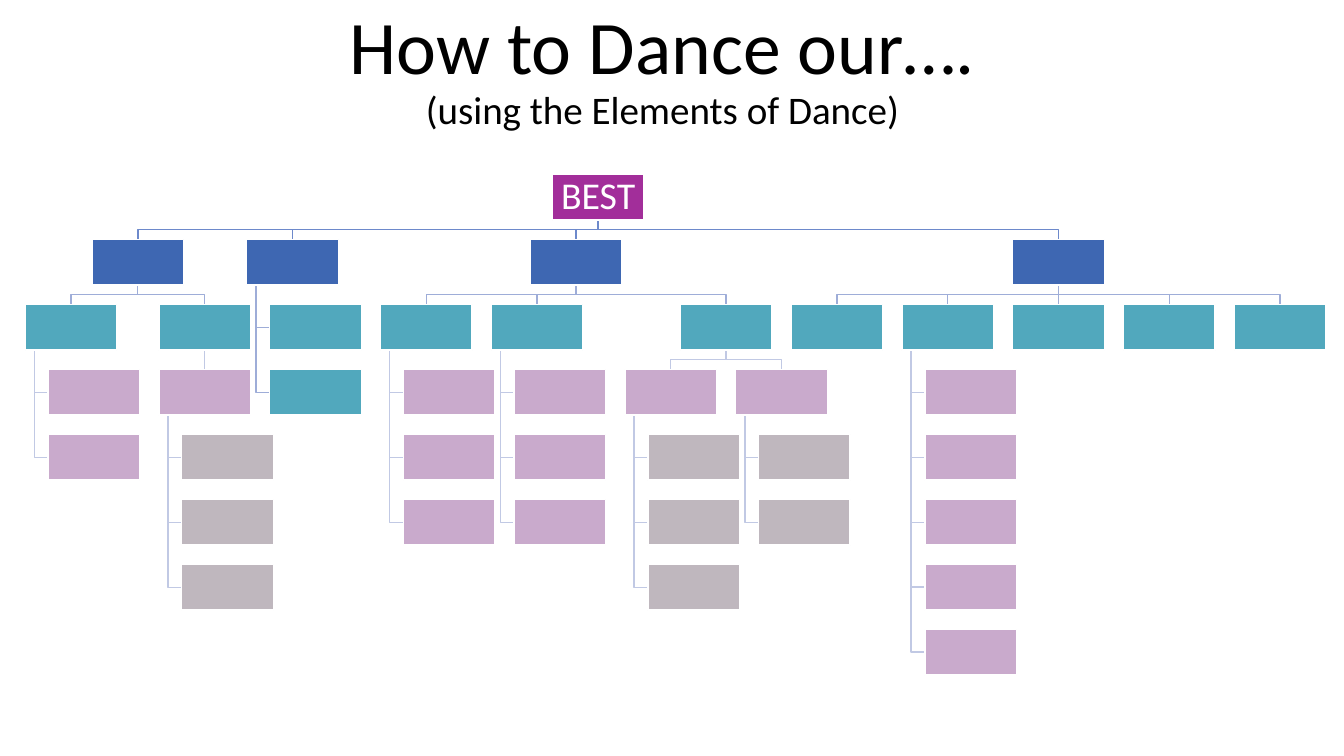
from dataclasses import dataclass, field

from lxml.etree import SubElement
from pptx import Presentation
from pptx.dml.color import RGBColor
from pptx.enum.shapes import MSO_CONNECTOR, MSO_SHAPE
from pptx.enum.text import MSO_ANCHOR, PP_ALIGN
from pptx.oxml.ns import qn
from pptx.util import Inches, Pt

SLIDE_WIDTH, SLIDE_HEIGHT = 13.33, 7.5
BOX_FILLS = ["A22E9A", "3E67B2", "51A8BD", "C9AACC", "BFB7BE"]
LINE_COLOURS = ["6D89CB", "9EADD8", "C1C9E4", "C1C9E4"]

# Chart measures, as shares of one box's width
BOX_HEIGHT = 0.5
COLUMN_STEP = 1.21
ROW_STEP = 0.71
INDENT = 0.25
SPINE = 0.1


@dataclass
class Node:
    children: list = field(default_factory=list)
    hanging: bool = False
    text: str = ""
    column: float = 0
    row: int = 0
    level: int = 0

    def walk(self):
        yield self
        for child in self.children:
            yield from child.walk()

    def shift(self, distance):
        for node in self.walk():
            node.column += distance


def branch(*children, text=""):
    return Node(list(children), text=text)


def stack(count):
    return Node([Node() for _ in range(count)], hanging=True)


def dance_tree():
    return branch(
        branch(stack(2), branch(stack(3))),
        stack(2),
        branch(stack(3), stack(3), branch(stack(3), stack(2))),
        branch(Node(), stack(5), Node(), Node(), Node()),
        text="BEST",
    )


def arrange(node, row=0, level=0):
    """Pack subtrees side by side and centre each parent over its children."""
    node.row, node.level = row, level
    if node.hanging:
        for number, child in enumerate(node.children, 1):
            arrange(child, row + number, level + 1)
            child.column = node.column + INDENT
        return
    row_ends = {}
    for child in node.children:
        arrange(child, row + 1, level + 1)
        child.shift(max((row_ends[part.row] + COLUMN_STEP - part.column
                         for part in child.walk() if part.row in row_ends), default=0))
        for part in child.walk():
            row_ends[part.row] = max(part.column, row_ends.get(part.row, part.column))
    if node.children:
        node.column = (node.children[0].column + node.children[-1].column) / 2


def colour(hex_text):
    return RGBColor.from_string(hex_text)


def set_attributes(target, values):
    for name, value in values.items():
        setattr(target, name, value)


def format_line(line, hex_text):
    line.color.rgb = colour(hex_text)
    line.width = Pt(1)


def format_frame(frame, anchor, margin):
    set_attributes(frame, {
        "word_wrap": True, "vertical_anchor": anchor,
        "margin_left": margin, "margin_right": margin,
        "margin_top": margin, "margin_bottom": margin,
    })
    paragraph = frame.paragraphs[0]
    set_attributes(paragraph, {"alignment": PP_ALIGN.CENTER, "line_spacing": 0.9})
    return paragraph


def add_run(paragraph, text, size, hex_text):
    run = paragraph.add_run()
    run.text = text
    set_attributes(run.font, {"name": "Calibri", "size": Pt(size)})
    run.font.color.rgb = colour(hex_text)


def add_title(slide, left, top, width, height):
    box = slide.shapes.add_textbox(*map(Inches, (left, top, width, height)))
    paragraph = format_frame(box.text_frame, MSO_ANCHOR.BOTTOM, Inches(0.05))
    add_run(paragraph, "How to Dance our….", 54, "000000")
    paragraph.add_line_break()
    add_run(paragraph, "(using the Elements of Dance)", 27.9, "000000")


def add_link(shapes, points, hex_text):
    points = [(Inches(x), Inches(y)) for x, y in points]
    if points[0][0] == points[-1][0]:
        link = shapes.add_connector(MSO_CONNECTOR.STRAIGHT, *points[0], *points[-1])
        SubElement(link._element.spPr, qn("a:effectLst"))
    else:
        builder = shapes.build_freeform(*points[0])
        builder.add_line_segments(points[1:], close=False)
        link = builder.convert_to_shape()
        link.fill.background()
        link.shadow.inherit = False
    format_line(link.line, hex_text)


def add_box(shapes, node, left, top, width):
    box = shapes.add_shape(MSO_SHAPE.RECTANGLE, *map(Inches, (left, top, width, width * BOX_HEIGHT)))
    box.shadow.inherit = False
    box.fill.solid()
    box.fill.fore_color.rgb = colour(BOX_FILLS[node.level])
    format_line(box.line, "FFFFFF")
    if node.text:
        paragraph = format_frame(box.text_frame, MSO_ANCHOR.MIDDLE, Inches(0.02))
        add_run(paragraph, node.text, 27, "FFFFFF")


def add_tree(slide, root, left, top, width):
    arrange(root)
    root.shift(-min(node.column for node in root.walk()))
    unit = width / (max(node.column for node in root.walk()) + 1)
    shapes = slide.shapes.add_group_shape().shapes

    def place(column, row_share):
        return left + column * unit, top + row_share * unit

    # Links lie behind the boxes
    for parent in root.walk():
        bottom = parent.row * ROW_STEP + BOX_HEIGHT
        for child in parent.children:
            child_top = child.row * ROW_STEP
            if parent.hanging:
                spine, middle = parent.column + SPINE, child_top + BOX_HEIGHT / 2
                corners = [(spine, bottom), (spine, middle), (child.column, middle)]
            else:
                start, end = parent.column + 0.5, child.column + 0.5
                halfway = (bottom + child_top) / 2
                corners = [(start, bottom), (start, halfway), (end, halfway), (end, child_top)]
            add_link(shapes, [place(*corner) for corner in corners], LINE_COLOURS[parent.level])

    # Boxes
    for node in root.walk():
        add_box(shapes, node, *place(node.column, node.row * ROW_STEP), unit)


def main():
    presentation = Presentation()
    presentation.slide_width = Inches(SLIDE_WIDTH)
    presentation.slide_height = Inches(SLIDE_HEIGHT)
    slide = presentation.slides.add_slide(presentation.slide_layouts[6])
    add_title(slide, 1.57, 0.43, 10, 0.94)
    add_tree(slide, dance_tree(), 0.25, 1.73, 12.9)
    presentation.save("out.pptx")


if __name__ == "__main__":
    main()
